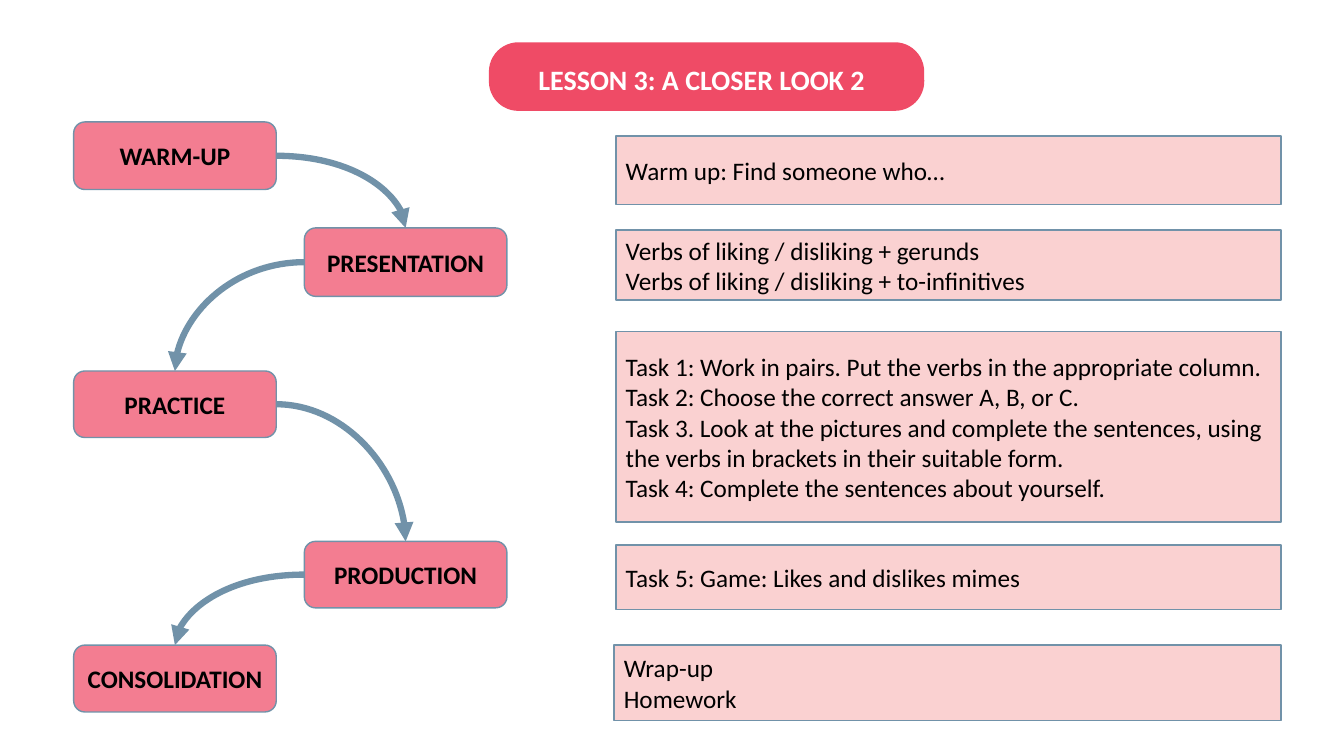
from dataclasses import dataclass
from itertools import pairwise

from lxml.etree import SubElement
from pptx import Presentation
from pptx.dml.color import RGBColor as Rgb
from pptx.enum.shapes import MSO_CONNECTOR as Conn, MSO_SHAPE as Geom
from pptx.enum.text import MSO_ANCHOR as Anchor, MSO_AUTO_SIZE as Fit, PP_ALIGN as Align
from pptx.oxml.ns import qn
from pptx.util import Pt


@dataclass(frozen=True)
class Theme:
    font: str = "Calibri"
    title: int = 20
    body: int = 18
    badge: str = "EF4B66"
    step: str = "F37D91"
    panel: str = "F7A5A5"
    line: str = "7192A9"
    dark: str = "000000"
    light: str = "FFFFFF"
    edge: float = 1
    arrow: float = 4.5


THEME = Theme()
TITLE = "LESSON 3: A CLOSER LOOK 2"
LEFTS = (52.6, 217.4)  # the steps alternate between two columns
WIDTH = 144.7
RIGHT = 915.1  # shared right edge of the panels

# Step name, top, height
STEPS = [
    ("WARM-UP", 87.1, 48.3),
    ("PRESENTATION", 162.8, 48.9),
    ("PRACTICE", 265, 47.5),
    ("PRODUCTION", 386.7, 47.5),
    ("CONSOLIDATION", 460.8, 47.8),
]

# Left, top, height, lines
PANELS = [
    (439.9, 97.2, 49, ["Warm up: Find someone who…"]),
    (439.9, 164.2, 50.2, ["Verbs of liking / disliking + gerunds",
                          "Verbs of liking / disliking + to-infinitives"]),
    (439.9, 236.9, 136.1, [
        "Task 1: Work in pairs. Put the verbs in the appropriate column.",
        "Task 2: Choose the correct answer A, B, or C.",
        "Task 3. Look at the pictures and complete the sentences, using "
        "the verbs in brackets in their suitable form.",
        "Task 4: Complete the sentences about yourself."]),
    (439.9, 389.3, 46.3, ["Task 5: Game: Likes and dislikes mimes"]),
    (438.5, 460.8, 54, ["Wrap-up", "Homework"]),
]


def apply(item, style):
    for name, value in style.items():
        setattr(item, name, value)


def write(shape, lines, size, color, bold=False, align=Align.LEFT, anchor=Anchor.MIDDLE):
    frame = shape.text_frame
    apply(frame, {"word_wrap": True, "auto_size": Fit.NONE, "vertical_anchor": anchor})
    frame.text = "\n".join(lines)
    for para in frame.paragraphs:
        para.alignment = align
        apply(para.runs[0].font, {"name": THEME.font, "size": Pt(size), "bold": bold})
        para.runs[0].font.color.rgb = Rgb.from_string(color)


def add_box(slide, geom, box, fill, line=None):
    shape = slide.shapes.add_shape(geom, *map(Pt, box))
    shape.shadow.inherit = False
    shape.fill.solid()
    shape.fill.fore_color.rgb = Rgb.from_string(fill)
    if line:
        shape.line.color.rgb = Rgb.from_string(line)
        shape.line.width = Pt(THEME.edge)
    else:
        shape.line.fill.background()
    return shape


def add_title(slide):
    badge = add_box(slide, Geom.ROUNDED_RECTANGLE, (349.2, 30.2, 311, 49), THEME.badge)
    badge.adjustments[0] = 0.43
    title = slide.shapes.title
    title._element.addprevious(badge._element)  # badge lies behind the title
    apply(title, {"left": Pt(377.3), "top": Pt(41), "width": Pt(283), "height": Pt(31.5)})
    write(title, [TITLE], THEME.title, THEME.light, bold=True, anchor=Anchor.TOP)


def add_step(slide, left, name, top, height):
    box = (left, top, WIDTH, height)
    step = add_box(slide, Geom.ROUNDED_RECTANGLE, box, THEME.step, THEME.line)
    write(step, [name], THEME.body, THEME.dark, bold=True, align=Align.CENTER)
    apply(step.text_frame, {"margin_left": 0, "margin_right": 0})
    return step


def add_panel(slide, left, top, height, lines):
    box = (left, top, RIGHT - left, height)
    panel = add_box(slide, Geom.RECTANGLE, box, THEME.panel, THEME.line)
    # Half transparent fill
    tint = panel._element.spPr.find(qn("a:solidFill"))[0]
    SubElement(tint, qn("a:alpha"), val="50000")
    write(panel, lines, THEME.body, THEME.dark)


def add_arrow(slide, start, end):
    arrow = slide.shapes.add_connector(Conn.CURVE, 0, 0, 0, 0)
    arrow.begin_connect(start, 3 if start.left < end.left else 1)
    arrow.end_connect(end, 0)
    arrow.line.color.rgb = Rgb.from_string(THEME.line)
    arrow.line.width = Pt(THEME.arrow)
    # Quarter curve, arrowhead, no shadow
    props = arrow._element.spPr
    props.find(qn("a:prstGeom")).set("prst", "curvedConnector2")
    SubElement(props.find(qn("a:ln")), qn("a:tailEnd"), type="triangle")
    SubElement(props, qn("a:effectLst"))


def main():
    deck = Presentation()
    apply(deck, {"slide_width": Pt(960), "slide_height": Pt(540)})
    slide = deck.slides.add_slide(deck.slide_layouts[5])

    add_title(slide)
    # Lesson stages, linked in order
    steps = [add_step(slide, LEFTS[i % 2], *step) for i, step in enumerate(STEPS)]
    for start, end in pairwise(steps):
        add_arrow(slide, start, end)
    # What happens in each stage
    for panel in PANELS:
        add_panel(slide, *panel)

    deck.save("out.pptx")


if __name__ == "__main__":
    main()
